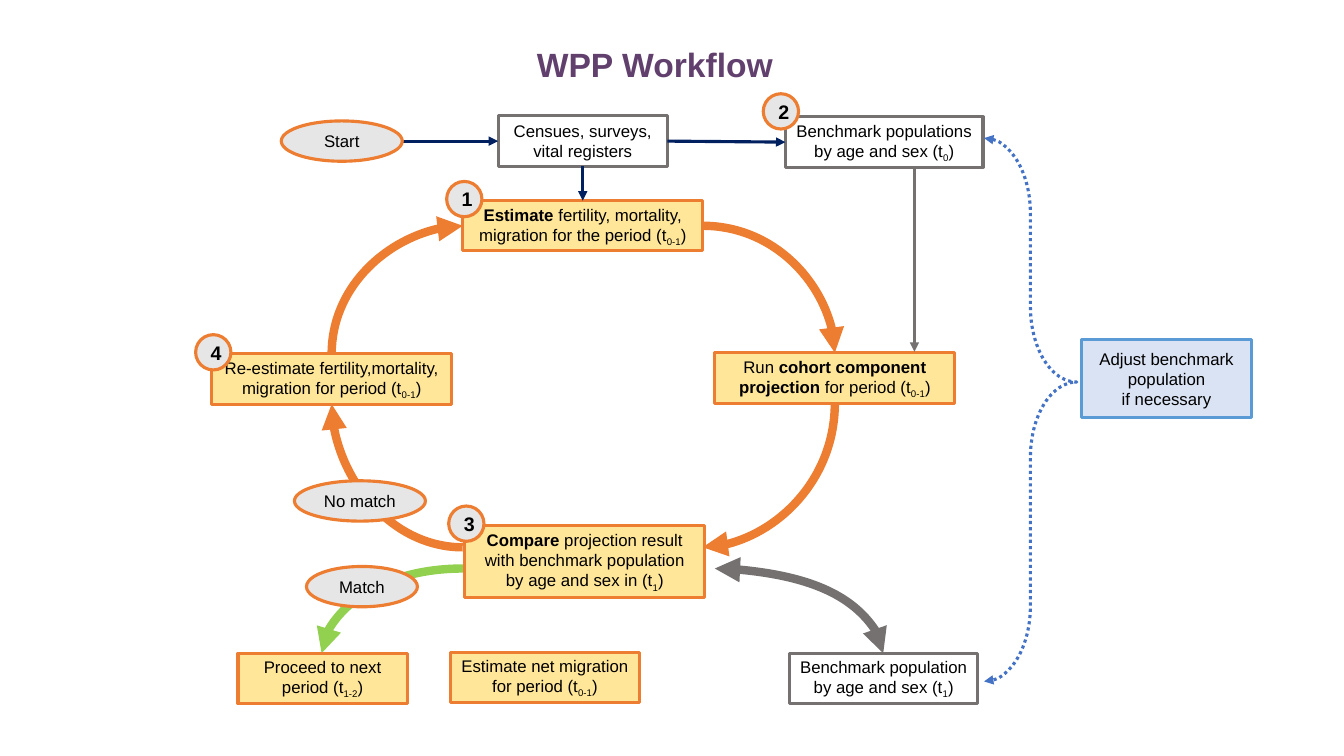
from lxml.etree import SubElement
from pptx import Presentation
from pptx.dml.color import RGBColor
from pptx.enum.dml import MSO_LINE
from pptx.enum.shapes import MSO_CONNECTOR, MSO_SHAPE
from pptx.enum.text import MSO_ANCHOR, PP_ALIGN
from pptx.oxml.ns import qn
from pptx.util import Inches, Pt

ORANGE, YELLOW, GRAY, PALE = "ED7D31", "FFE699", "767171", "E7E6E6"
WHITE, NAVY, GREEN, BLUE = "FFFFFF", "002060", "92D050", "4472C4"


def add_node(kind, left, top, width, height, fill, line, paragraphs, size=12):
    """Add an outlined shape; each paragraph is a list of (text, style) runs."""
    shape = slide.shapes.add_shape(
        kind, Inches(left), Inches(top), Inches(width), Inches(height))
    shape.shadow.inherit = False
    shape.fill.solid()
    shape.fill.fore_color.rgb = RGBColor.from_string(fill)
    shape.line.color.rgb = RGBColor.from_string(line)
    shape.line.width = Pt(2.25)
    frame = shape.text_frame
    frame.word_wrap = True
    frame.vertical_anchor = MSO_ANCHOR.MIDDLE
    for index, runs in enumerate(paragraphs):
        paragraph = frame.add_paragraph() if index else frame.paragraphs[0]
        paragraph.alignment = PP_ALIGN.CENTER
        for text, style in runs:
            run = paragraph.add_run()
            run.text = text
            run.font.name = "Arial"
            run.font.size = Pt(size)
            run.font.bold = style == "bold"
            run.font.color.rgb = RGBColor.from_string("000000")
            if style == "sub":
                run._r.get_or_add_rPr().set("baseline", "-25000")
    return shape


def style_line(shape, color, width, ends):
    """Colour a line and put triangle arrowheads on the named ends."""
    shape.line.color.rgb = RGBColor.from_string(color)
    shape.line.width = Pt(width)
    for end in ends:
        SubElement(shape.line._get_or_add_ln(), qn(f"a:{end}End"), type="triangle")
    properties = shape._element.spPr
    if properties.find(qn("a:effectLst")) is None:
        SubElement(properties, qn("a:effectLst"))


presentation = Presentation()
presentation.slide_width = Inches(13.33)
presentation.slide_height = Inches(7.5)
slide = presentation.slides.add_slide(presentation.slide_layouts[5])

# Title
title = slide.shapes.title
title.left, title.top = Inches(0.58), Inches(0.39)
title.width, title.height = Inches(11.83), Inches(0.5)
title.text_frame.vertical_anchor = MSO_ANCHOR.MIDDLE
title_paragraph = title.text_frame.paragraphs[0]
title_paragraph.alignment = PP_ALIGN.CENTER
title_run = title_paragraph.add_run()
title_run.text = "WPP Workflow"
title_run.font.name = "Arial"
title_run.font.size = Pt(24)
title_run.font.bold = True
title_run.font.color.rgb = RGBColor.from_string("62406D")

# Curved arrows: from the horizontal end to the vertical end
curves = [
    (6.97, 5.43, 8.28, 4.0, ORANGE, ["head"]),
    (4.59, 5.43, 3.29, 4.01, ORANGE, ["tail"]),
    (4.59, 2.24, 3.29, 3.51, ORANGE, ["head"]),
    (6.97, 2.24, 8.28, 3.5, ORANGE, ["tail"]),
    (4.6, 5.64, 3.19, 6.48, GREEN, ["tail"]),
    (7.09, 5.64, 8.76, 6.48, GRAY, ["head", "tail"]),
]
for x1, y1, x2, y2, color, ends in curves:
    curve = slide.shapes.add_connector(
        MSO_CONNECTOR.CURVE, Inches(x1), Inches(y1), Inches(x2), Inches(y2))
    curve._element.spPr.find(qn("a:prstGeom")).set("prst", "curvedConnector2")
    style_line(curve, color, 6, ends)

# Boxes
boxes = {
    "censuses": (4.94, 1.15, 1.68, 0.5, WHITE, GRAY,
                 [[("Censues, surveys, vital registers", "")]]),
    "benchmark start": (7.79, 1.16, 1.96, 0.5, WHITE, GRAY,
                        [[("Benchmark populations", "")],
                         [("by age and sex (t", ""), ("0", "sub"), (")", "")]]),
    "estimate": (4.59, 1.99, 2.38, 0.5, YELLOW, ORANGE,
                 [[("Estimate", "bold"),
                   (" fertility, mortality, migration for the period (t", ""),
                   ("0-1", "sub"), (")", "")]]),
    "project": (7.09, 3.5, 2.38, 0.5, YELLOW, ORANGE,
                [[("Run", ""), (" cohort component projection", "bold"),
                  (" for period (t", ""), ("0-1", "sub"), (")", "")]]),
    "re-estimate": (2.1, 3.51, 2.38, 0.5, YELLOW, ORANGE,
                    [[("Re-estimate fertility,mortality, migration for period (t", ""),
                      ("0-1", "sub"), (")", "")]]),
    "compare": (4.61, 5.21, 2.38, 0.72, YELLOW, ORANGE,
                [[("Compare ", "bold"),
                  ("projection result with benchmark population by age and sex in (t", ""),
                  ("1", "sub"), (")", "")]]),
    "proceed": (2.36, 6.48, 1.68, 0.5, YELLOW, ORANGE,
                [[("Proceed to next period (t", ""), ("1-2", "sub"), (")", "")]]),
    "net migration": (4.47, 6.47, 1.87, 0.5, YELLOW, ORANGE,
                      [[("Estimate net migration for period (t", ""),
                        ("0-1", "sub"), (")", "")]]),
    "benchmark end": (7.83, 6.48, 1.87, 0.5, WHITE, GRAY,
                      [[("Benchmark population by age and sex (t", ""),
                        ("1", "sub"), (")", "")]]),
    "adjust": (10.73, 3.37, 1.68, 0.77, "DAE3F3", "5B9BD5",
               [[("Adjust benchmark population", "")], [("if necessary", "")]]),
}
nodes = {name: add_node(MSO_SHAPE.RECTANGLE, *box) for name, box in boxes.items()}

# Straight arrows, joined where they meet the middle of a side
arrows = [
    (3.99, 1.4, 4.94, 1.4, NAVY, None, ("censuses", 1)),
    (6.62, 1.4, 7.79, 1.41, NAVY, ("censuses", 3), ("benchmark start", 1)),
    (5.78, 1.65, 5.78, 1.99, NAVY, ("censuses", 2), ("estimate", 0)),
    (9.07, 1.66, 9.07, 3.49, GRAY, None, None),
]
for x1, y1, x2, y2, color, begin, end in arrows:
    arrow = slide.shapes.add_connector(
        MSO_CONNECTOR.STRAIGHT, Inches(x1), Inches(y1), Inches(x2), Inches(y2))
    if begin:
        arrow.begin_connect(nodes[begin[0]], begin[1])
    if end:
        arrow.end_connect(nodes[end[0]], end[1])
    style_line(arrow, color, 2.25, ["tail"])

# Ovals
for label, left, top, width in [
        ("Start", 2.79, 1.2, 1.2), ("No match", 2.92, 4.77, 1.3), ("Match", 3.04, 5.62, 1.1)]:
    add_node(MSO_SHAPE.OVAL, left, top, width, 0.4, PALE, ORANGE, [[(label, "")]])

# Step numbers
for number, left, top in [
        ("1", 4.43, 1.8), ("2", 7.57, 0.93), ("3", 4.45, 5.02), ("4", 1.94, 3.32)]:
    add_node(MSO_SHAPE.FLOWCHART_CONNECTOR, left, top, 0.35, 0.35, PALE, ORANGE,
             [[(number, "bold")]], size=14)

# Dotted brace leading to the adjustment box
brace = slide.shapes.add_shape(
    MSO_SHAPE.RIGHT_BRACE, Inches(9.76), Inches(1.37), Inches(0.92), Inches(5.39))
brace.shadow.inherit = False
brace.adjustments[0] = 0.813
brace.adjustments[1] = 0.449
brace.fill.background()
brace.line.dash_style = MSO_LINE.ROUND_DOT
style_line(brace, BLUE, 2.25, ["head", "tail"])

presentation.save("out.pptx")
